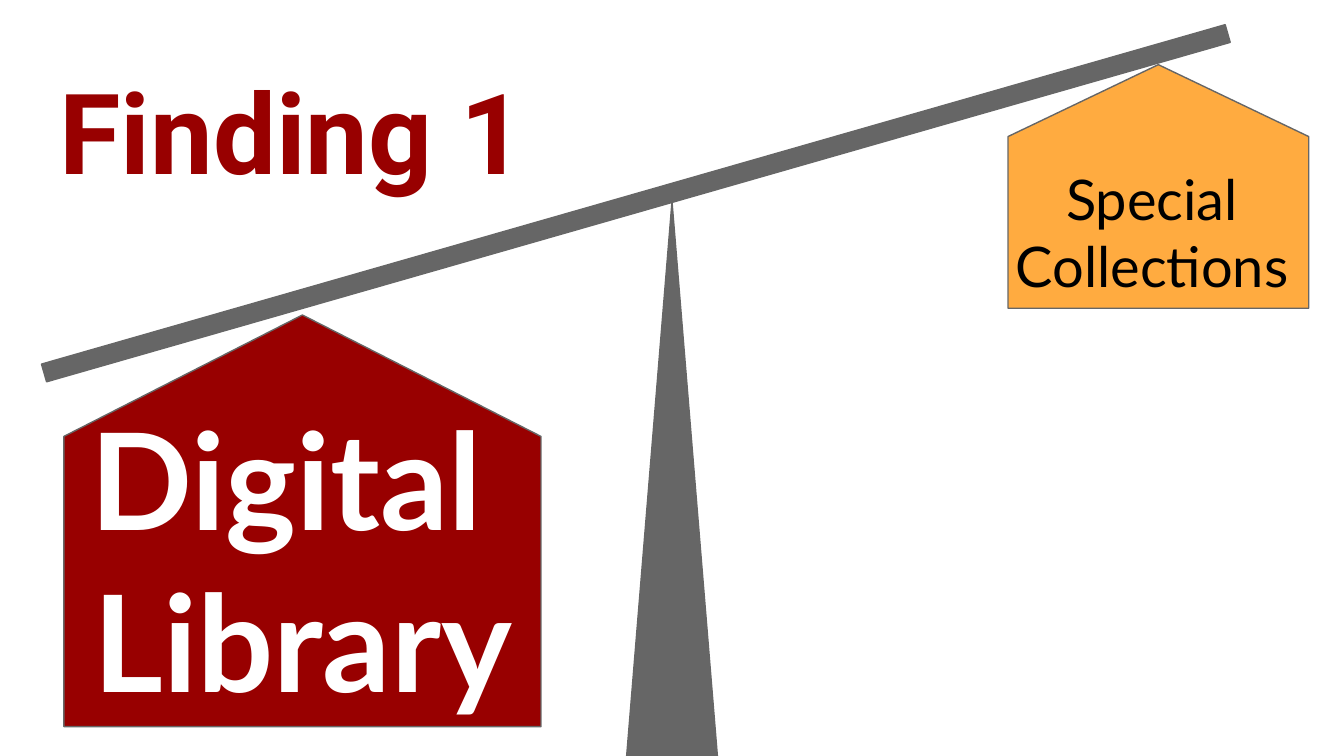
from dataclasses import dataclass

from pptx import Presentation
from pptx.dml.color import RGBColor
from pptx.enum.shapes import MSO_SHAPE
from pptx.enum.text import MSO_ANCHOR, PP_ALIGN
from pptx.util import Pt

EMU_PER_PX = 5715
BLANK_LAYOUT = 6
BEAM = MSO_SHAPE.RECTANGLE
PILLAR = MSO_SHAPE.ISOSCELES_TRIANGLE
HOUSE = MSO_SHAPE.PENTAGON
TOP = MSO_ANCHOR.TOP
LEFT, CENTER = PP_ALIGN.LEFT, PP_ALIGN.CENTER


@dataclass(frozen=True)
class Theme:
    crimson: str = "980000"
    orange: str = "FFAB40"
    gray: str = "666666"
    white: str = "FFFFFF"
    black: str = "000000"
    heading_font: str = "Roboto"
    label_font: str = "Lato"
    heading_size: int = 60
    heavy_size: int = 72
    light_size: int = 30
    outline: float = 0.75


def px(value):
    return value * EMU_PER_PX


class SlideBuilder:
    """Draws outlined shapes and text on one slide in a shared theme."""

    def __init__(self, slide, theme):
        self.slide = slide
        self.theme = theme

    def shape(self, kind, box, fill, rotation=0, adjustment=None):
        shape = self.slide.shapes.add_shape(kind, *map(px, box))
        shape.rotation = rotation
        if adjustment is not None:
            shape.adjustments[0] = adjustment
        shape.shadow.inherit = False
        shape.fill.solid()
        shape.fill.fore_color.rgb = RGBColor.from_string(fill)
        shape.line.color.rgb = RGBColor.from_string(self.theme.gray)
        shape.line.width = Pt(self.theme.outline)

    def house(self, box, fill):
        left, top, width, height = box
        shift = (width - height) // 2
        turned = (left + shift, top - shift, height, width)
        self.shape(HOUSE, turned, fill, rotation=270, adjustment=0.295)

    def text(self, box, lines, font, size, color, bold=False, align=CENTER):
        frame = self.slide.shapes.add_textbox(*map(px, box)).text_frame
        frame.word_wrap = True
        frame.vertical_anchor = TOP
        frame.margin_left = frame.margin_right = px(16)
        frame.margin_top = frame.margin_bottom = px(16)
        frame.text = "\n".join(lines)
        for paragraph in frame.paragraphs:
            paragraph.alignment = align
            paragraph.font.name = font
            paragraph.font.size = Pt(size)
            paragraph.font.bold = bold
            paragraph.font.color.rgb = RGBColor.from_string(color)


def main():
    deck = Presentation()
    deck.slide_width, deck.slide_height = px(1600), px(900)
    theme = Theme()
    scale = SlideBuilder(deck.slides.add_slide(deck.slide_layouts[BLANK_LAYOUT]), theme)

    scale.house((76, 375, 568, 490), theme.crimson)
    scale.shape(BEAM, (24, 231, 1466, 22), theme.gray, rotation=344)
    scale.text((55, 58, 1491, 101), ["Finding 1"], theme.heading_font,
               theme.heading_size, theme.crimson, bold=True, align=LEFT)
    scale.shape(PILLAR, (746, 240, 108, 660), theme.gray)
    scale.text((74, 456, 573, 374), ["Digital ", "Library"], theme.label_font,
               theme.heavy_size, theme.white, bold=True)
    scale.house((1200, 77, 358, 290), theme.orange)
    scale.text((1170, 180, 403, 184), ["Special Collections"], theme.label_font,
               theme.light_size, theme.black)

    deck.save("out.pptx")


if __name__ == "__main__":
    main()
